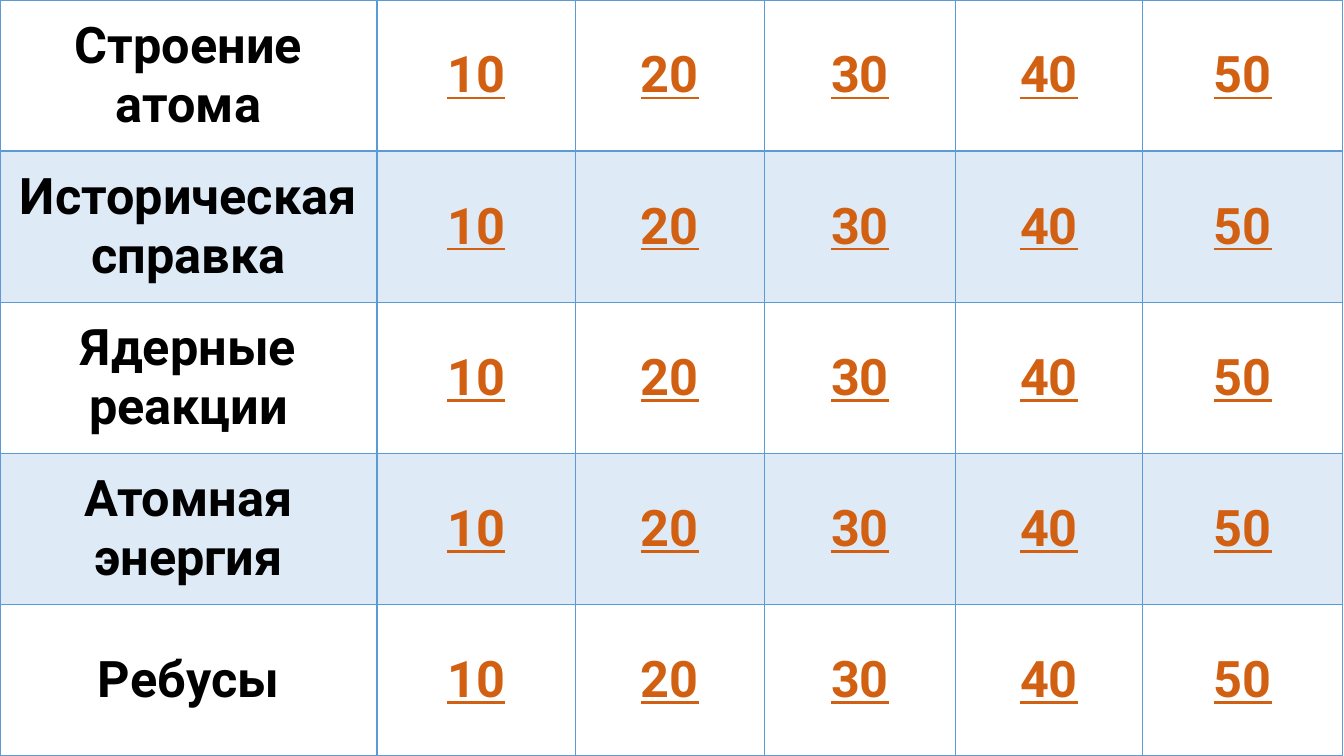
"""Builds the quiz board slide: five topics with five question values each."""
from dataclasses import dataclass

from lxml.etree import SubElement
from pptx import Presentation
from pptx.dml.color import RGBColor
from pptx.enum.text import MSO_ANCHOR, PP_ALIGN
from pptx.oxml import parse_xml
from pptx.oxml.ns import nsdecls, qn
from pptx.util import Inches, Pt

TOPICS = [
    "Строение атома",
    "Историческая справка",
    "Ядерные реакции",
    "Атомная энергия",
    "Ребусы",
]
POINTS = ["10", "20", "30", "40", "50"]
COL_WIDTHS = [3.74, 1.97, 1.87, 1.9, 1.85, 1.99]
SLIDE_W, SLIDE_H = 13.33, 7.5


@dataclass(frozen=True)
class Theme:
    font: str = "Roboto"
    size: int = 36
    topic: str = "000000"
    points: str = "D26012"
    accent: str = "5B9BD5"
    band_alpha: int = 20
    line: int = 1
    heavy_line: int = 2


THEME = Theme()


def set_text(cell, text, color, underline):
    cell.vertical_anchor = MSO_ANCHOR.MIDDLE
    p = cell.text_frame.paragraphs[0]
    p.text = text
    p.alignment = PP_ALIGN.CENTER
    p.font.name = THEME.font
    p.font.size = Pt(THEME.size)
    p.font.bold = True
    p.font.underline = underline
    p.font.color.rgb = RGBColor.from_string(color)


def set_fill(cell, banded):
    if not banded:
        cell.fill.background()
        return
    cell.fill.solid()
    cell.fill.fore_color.rgb = RGBColor.from_string(THEME.accent)
    clr = cell._tc.tcPr.find(qn("a:solidFill")).find(qn("a:srgbClr"))
    SubElement(clr, qn("a:alpha"), val=str(THEME.band_alpha * 1000))


def set_borders(cell, top, bottom):
    tcPr = cell._tc.get_or_add_tcPr()
    widths = {"lnL": THEME.line, "lnR": THEME.line, "lnT": top, "lnB": bottom}
    for i, (side, width) in enumerate(widths.items()):
        tcPr.insert(i, parse_xml(
            f'<a:{side} {nsdecls("a")} w="{Pt(width)}"><a:solidFill>'
            f'<a:srgbClr val="{THEME.accent}"/></a:solidFill></a:{side}>'))


def add_board(slide):
    frame = slide.shapes.add_table(
        len(TOPICS), len(COL_WIDTHS), 0, 0, Inches(SLIDE_W), Inches(SLIDE_H))
    table = frame.table
    table.first_row = table.horz_banding = False
    for col, width in zip(table.columns, COL_WIDTHS):
        col.width = Inches(width)
    for row in table.rows:
        row.height = Inches(SLIDE_H / len(TOPICS))
    for r, topic in enumerate(TOPICS):
        top = THEME.heavy_line if r == 1 else THEME.line
        bottom = THEME.heavy_line if r == 0 else THEME.line
        for c, text in enumerate([topic, *POINTS]):
            cell = table.cell(r, c)
            set_text(cell, text, THEME.points if c else THEME.topic, c > 0)
            set_fill(cell, r % 2 == 1)
            set_borders(cell, top, bottom)


def main():
    prs = Presentation()
    prs.slide_width, prs.slide_height = Inches(SLIDE_W), Inches(SLIDE_H)
    add_board(prs.slides.add_slide(prs.slide_layouts[6]))
    prs.save("out.pptx")


if __name__ == "__main__":
    main()
